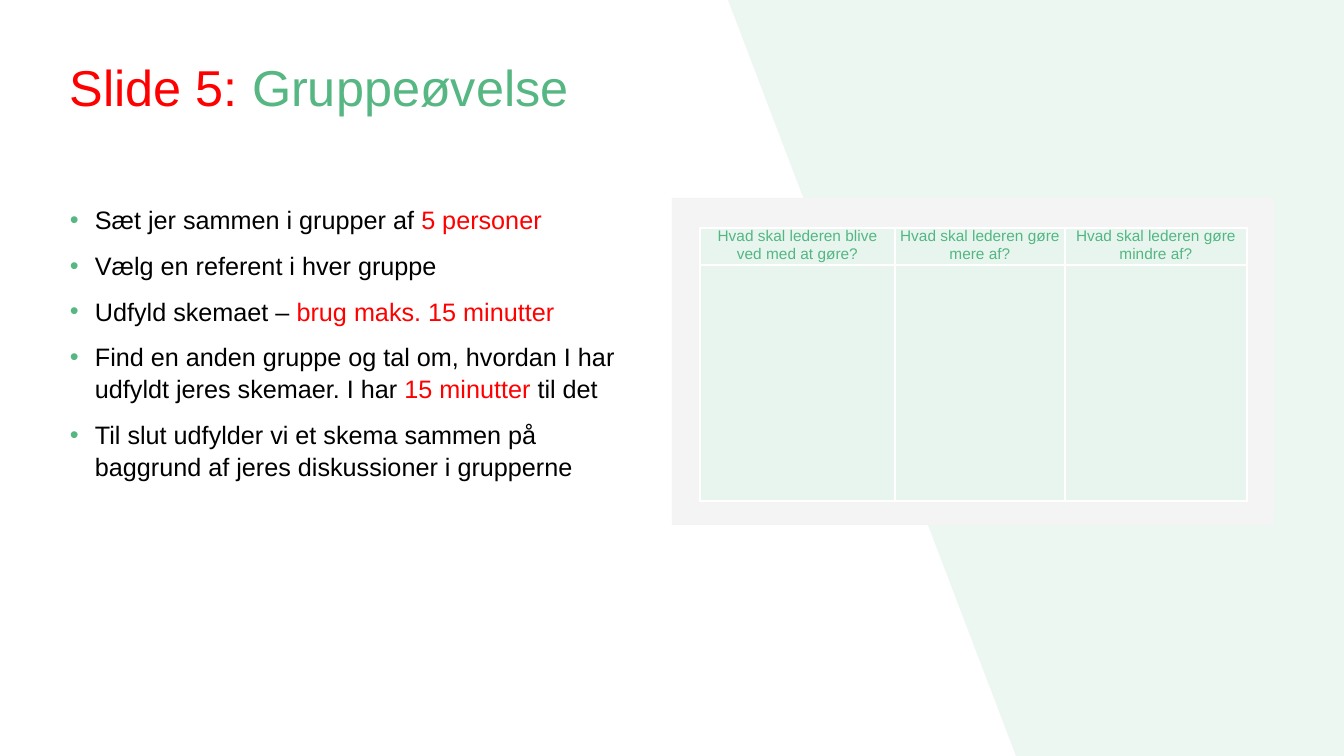
from dataclasses import dataclass

import lxml.etree
import pptx
import pptx.dml.color
import pptx.enum.shapes
import pptx.enum.text
import pptx.oxml.ns
import pptx.util

EMU_PER_PX = 914400 / 100.8
WIDTH, HEIGHT = 1344, 756
FONT = "Arial"
GREEN, RED, BLACK, WHITE = "56B783", "FF0000", "000000", "FFFFFF"
PANEL_GREY, HEADER_GREEN, CELL_GREEN = "F4F4F4", "53B682", "E8F5EF"


@dataclass(frozen=True)
class Box:
    left: int
    top: int
    width: int
    height: int

    def emu(self) -> tuple[int, ...]:
        return tuple(map(px, (self.left, self.top, self.width, self.height)))


@dataclass(frozen=True)
class Span:
    text: str
    color: str = BLACK


@dataclass(frozen=True)
class Column:
    heading: str
    width: int


TITLE = [Span("Slide 5: ", RED), Span("Gruppeøvelse", GREEN)]
STEPS = [
    [Span("Sæt jer sammen i grupper af "), Span("5 personer", RED)],
    [Span("Vælg en referent i hver gruppe")],
    [Span("Udfyld skemaet – "), Span("brug maks. 15 minutter", RED)],
    [
        Span("Find en anden gruppe og tal om, hvordan I har udfyldt jeres skemaer. I har "),
        Span("15 minutter ", RED),
        Span("til det"),
    ],
    [Span("Til slut udfylder vi et skema sammen på baggrund af jeres diskussioner i grupperne")],
]
COLUMNS = [
    Column("Hvad skal lederen blive ved med at gøre?", 195),
    Column("Hvad skal lederen gøre mere af?", 170),
    Column("Hvad skal lederen gøre mindre af?", 182),
]
ROW_HEIGHTS = [34, 236]


def px(length: int) -> int:
    return round(length * EMU_PER_PX)


def rgb(color: str) -> pptx.dml.color.RGBColor:
    return pptx.dml.color.RGBColor.from_string(color)


def add_element(parent, tag: str, **attributes: str):
    return lxml.etree.SubElement(parent, pptx.oxml.ns.qn(tag), attributes)


def paint(shape, color: str) -> None:
    shape.shadow.inherit = False
    shape.fill.solid()
    shape.fill.fore_color.rgb = rgb(color)
    shape.line.fill.background()


def add_backdrop(slide) -> None:
    builder = slide.shapes.build_freeform(728, 0, scale=EMU_PER_PX)
    builder.add_line_segments([(1016, HEIGHT), (WIDTH, HEIGHT), (WIDTH, 0)])
    shape = builder.convert_to_shape()
    paint(shape, GREEN)
    fill_color = shape.fill._xPr.find(".//" + pptx.oxml.ns.qn("a:srgbClr"))
    add_element(fill_color, "a:alpha", val="10000")


def add_text_frame(slide, box: Box):
    text_frame = slide.shapes.add_textbox(*box.emu()).text_frame
    text_frame.word_wrap = True
    return text_frame


def write_spans(paragraph, spans: list[Span], size: int) -> None:
    paragraph.font.name = FONT
    paragraph.font.size = pptx.util.Pt(size)
    for span in spans:
        run = paragraph.add_run()
        run.text = span.text
        run.font.color.rgb = rgb(span.color)


def add_title(slide, box: Box) -> None:
    paragraph = add_text_frame(slide, box).paragraphs[0]
    paragraph.line_spacing = 0.9
    write_spans(paragraph, TITLE, 36)


def add_bullet(paragraph, indent: int) -> None:
    properties = paragraph._p.get_or_add_pPr()
    properties.set("marL", str(px(indent)))
    properties.set("indent", str(-px(indent)))
    add_element(add_element(properties, "a:buClr"), "a:srgbClr", val=GREEN)
    add_element(properties, "a:buFont", typeface=FONT)
    add_element(properties, "a:buChar", char="•")


def add_steps(slide, box: Box) -> None:
    text_frame = add_text_frame(slide, box)
    for index, spans in enumerate(STEPS):
        paragraph = text_frame.add_paragraph() if index else text_frame.paragraphs[0]
        add_bullet(paragraph, 25)
        paragraph.line_spacing = 1.05
        if index:
            paragraph.space_before = pptx.util.Pt(10)
        write_spans(paragraph, spans, 18)


def add_panel(slide, box: Box) -> None:
    shape = slide.shapes.add_shape(pptx.enum.shapes.MSO_SHAPE.RECTANGLE, *box.emu())
    paint(shape, PANEL_GREY)


def add_borders(cell, sides: list[str]) -> None:
    properties = cell._tc.get_or_add_tcPr()
    for side in sides:
        line = add_element(properties, f"a:ln{side}", w=str(pptx.util.Pt(1)))
        add_element(add_element(line, "a:solidFill"), "a:srgbClr", val=WHITE)


def style_cell(cell, row: int, column: int) -> None:
    inner_sides = {
        "L": column > 0,
        "R": column < len(COLUMNS) - 1,
        "T": row > 0,
        "B": row < len(ROW_HEIGHTS) - 1,
    }
    add_borders(cell, [side for side, shown in inner_sides.items() if shown])
    cell.fill.solid()
    cell.fill.fore_color.rgb = rgb(CELL_GREEN)
    cell.margin_left = cell.margin_right = px(5)
    cell.margin_top = cell.margin_bottom = 0


def add_form(slide, left: int, top: int) -> None:
    box = Box(left, top, sum(column.width for column in COLUMNS), sum(ROW_HEIGHTS))
    table = slide.shapes.add_table(len(ROW_HEIGHTS), len(COLUMNS), *box.emu()).table
    table.first_row = table.horz_banding = False
    for row, height in enumerate(ROW_HEIGHTS):
        table.rows[row].height = px(height)
    for index, column in enumerate(COLUMNS):
        table.columns[index].width = px(column.width)
        for row in range(len(ROW_HEIGHTS)):
            style_cell(table.cell(row, index), row, index)
        paragraph = table.cell(0, index).text_frame.paragraphs[0]
        paragraph.alignment = pptx.enum.text.PP_ALIGN.CENTER
        write_spans(paragraph, [Span(column.heading, HEADER_GREEN)], 11)


def main() -> None:
    presentation = pptx.Presentation()
    presentation.slide_width = px(WIDTH)
    presentation.slide_height = px(HEIGHT)
    slide = presentation.slides.add_slide(presentation.slide_layouts[6])
    add_backdrop(slide)
    add_steps(slide, Box(60, 198, 598, 412))
    add_title(slide, Box(60, 58, 612, 112))
    add_panel(slide, Box(672, 198, 602, 327))
    add_form(slide, 700, 228)
    presentation.save("out.pptx")


if __name__ == "__main__":
    main()
